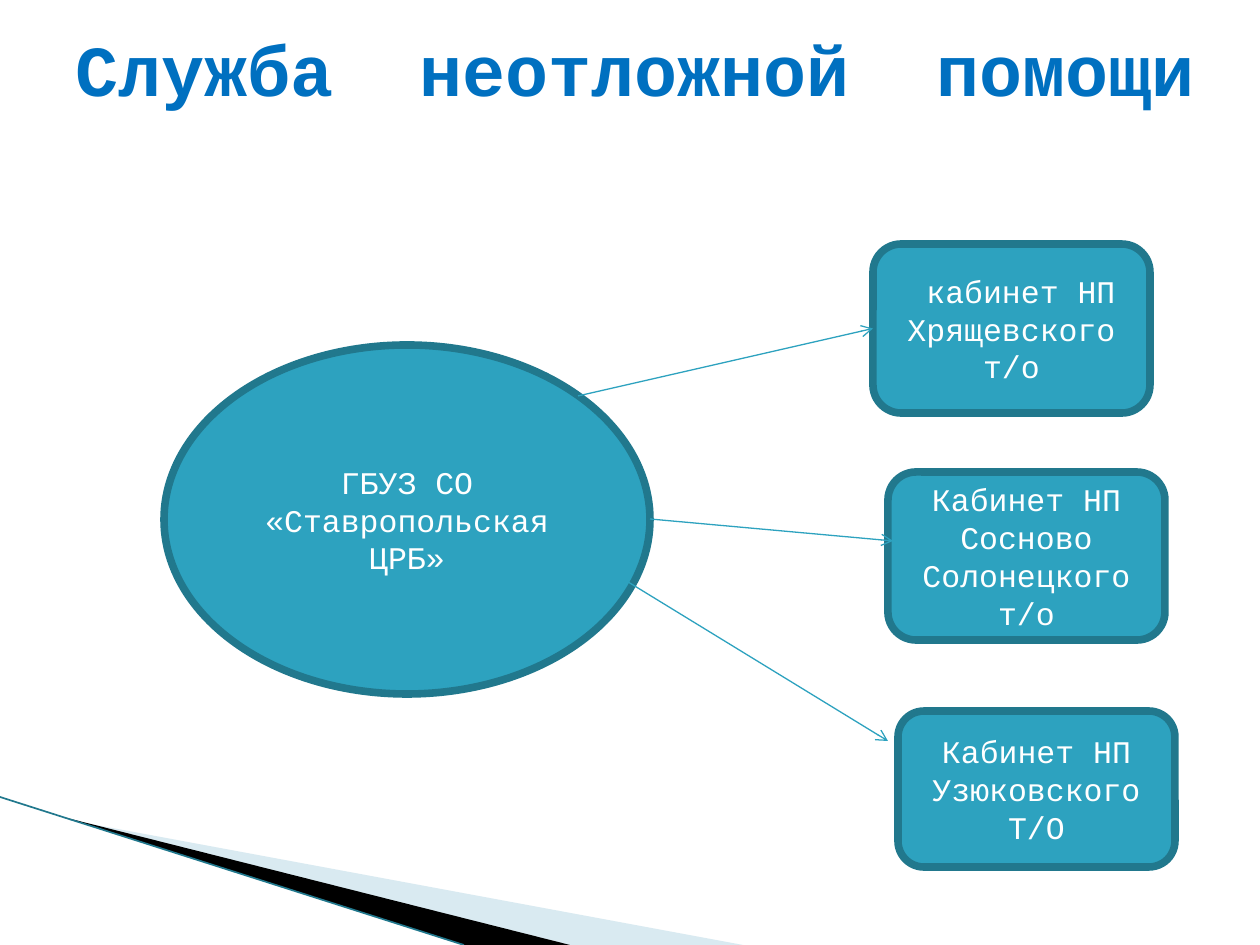
from lxml.etree import SubElement
from pptx import Presentation
from pptx.dml.color import RGBColor
from pptx.enum.shapes import MSO_CONNECTOR, MSO_SHAPE
from pptx.enum.text import MSO_ANCHOR, PP_ALIGN
from pptx.oxml.ns import qn
from pptx.util import Emu, Pt

PX = 914400 / 126
FONT = "Courier New"
BLUE = RGBColor(0x00, 0x70, 0xC0)
TEAL = RGBColor(0x2D, 0xA2, 0xBF)
DARK_TEAL = RGBColor(0x21, 0x78, 0x8D)
PALE = RGBColor(0xA0, 0xCB, 0xDC)
BLACK = RGBColor(0x00, 0x00, 0x00)
WHITE = RGBColor(0xFF, 0xFF, 0xFF)


def px(*lengths):
    return [Emu(round(length * PX)) for length in lengths]


class SlideBuilder:
    def __init__(self, page):
        self.page = page

    def style(self, para, size, color, bold=False):
        para.font.name = FONT
        para.font.size = Pt(size)
        para.font.bold = bold
        para.font.color.rgb = color

    def title(self, words, stops, *frame):
        box = self.page.shapes.add_textbox(*px(*frame))
        text = box.text_frame
        text.word_wrap = True
        text.margin_top = 0
        para = text.paragraphs[0]
        para.text = "\t".join(words)
        tabs = SubElement(para._p.get_or_add_pPr(), qn("a:tabLst"))
        for stop in px(*stops):
            SubElement(tabs, qn("a:tab"), pos=str(stop), algn="l")
        self.style(para, 41, BLUE, bold=True)

    def node(self, kind, words, *frame):
        shape = self.page.shapes.add_shape(kind, *px(*frame))
        shape.shadow.inherit = False
        shape.fill.solid()
        shape.fill.fore_color.rgb = TEAL
        shape.line.color.rgb = DARK_TEAL
        shape.line.width = Pt(4.33)
        text = shape.text_frame
        text.word_wrap = True
        text.vertical_anchor = MSO_ANCHOR.MIDDLE
        para = text.paragraphs[0]
        para.text = words
        para.alignment = PP_ALIGN.CENTER
        self.style(para, 18, WHITE)
        return shape

    def line(self, start, end, color, width, arrow=False):
        line = self.page.shapes.add_connector(
            MSO_CONNECTOR.STRAIGHT, *px(*start, *end))
        line.line.color.rgb = color
        line.line.width = Pt(width)
        if arrow:
            SubElement(line.line._get_or_add_ln(), qn("a:tailEnd"), type="arrow")
        SubElement(line._element.spPr, qn("a:effectLst"))
        return line

    def wedge(self, points, color, alpha=100):
        first, *rest = points
        outline = self.page.shapes.build_freeform(*first, scale=PX)
        outline.add_line_segments(rest, close=True)
        shape = outline.convert_to_shape()
        shape.shadow.inherit = False
        shape.fill.solid()
        shape.fill.fore_color.rgb = color
        shape.line.fill.background()
        if alpha < 100:
            tone = shape._element.spPr.find(qn("a:solidFill"))[0]
            SubElement(tone, qn("a:alpha"), val=str(alpha * 1000))


def main():
    deck = Presentation()
    deck.slide_width, deck.slide_height = px(1260, 945)
    builder = SlideBuilder(deck.slides.add_slide(deck.slide_layouts[6]))

    # Corner decoration
    builder.wedge([(69, 820), (743, 945), (570, 945)], PALE, alpha=40)
    builder.wedge([(67, 818), (570, 945), (464, 945)], BLACK)
    builder.line((0, 797), (464, 945), DARK_TEAL, 0.95)

    # Title, its words set apart by tab stops
    builder.title(["Служба", "неотложной", "помощи"], [344, 861],
                  63, 25, 1182, 216)

    # Hospital and its urgent care rooms
    builder.node(MSO_SHAPE.OVAL, "ГБУЗ СО «Ставропольская ЦРБ»",
                 164, 345, 486, 349)
    rooms = [
        (" кабинет НП Хрящевского т/о", 873, 244, 169),
        ("Кабинет НП Сосново Солонецкого т/о", 888, 472, 168),
        ("Кабинет НП Узюковского Т/О", 898, 711, 156),
    ]
    nodes = [builder.node(MSO_SHAPE.ROUNDED_RECTANGLE, words, left, top, 277, height)
             for words, left, top, height in rooms]

    # Arrows from the hospital to the rooms
    arrows = [
        ((578, 396), (873, 328)),
        ((650, 519), (893, 541)),
        ((620, 577), (888, 741)),
    ]
    links = [builder.line(start, end, TEAL, 0.75, arrow=True)
             for start, end in arrows]
    links[0].end_connect(nodes[0], 1)

    deck.save("out.pptx")


if __name__ == "__main__":
    main()
